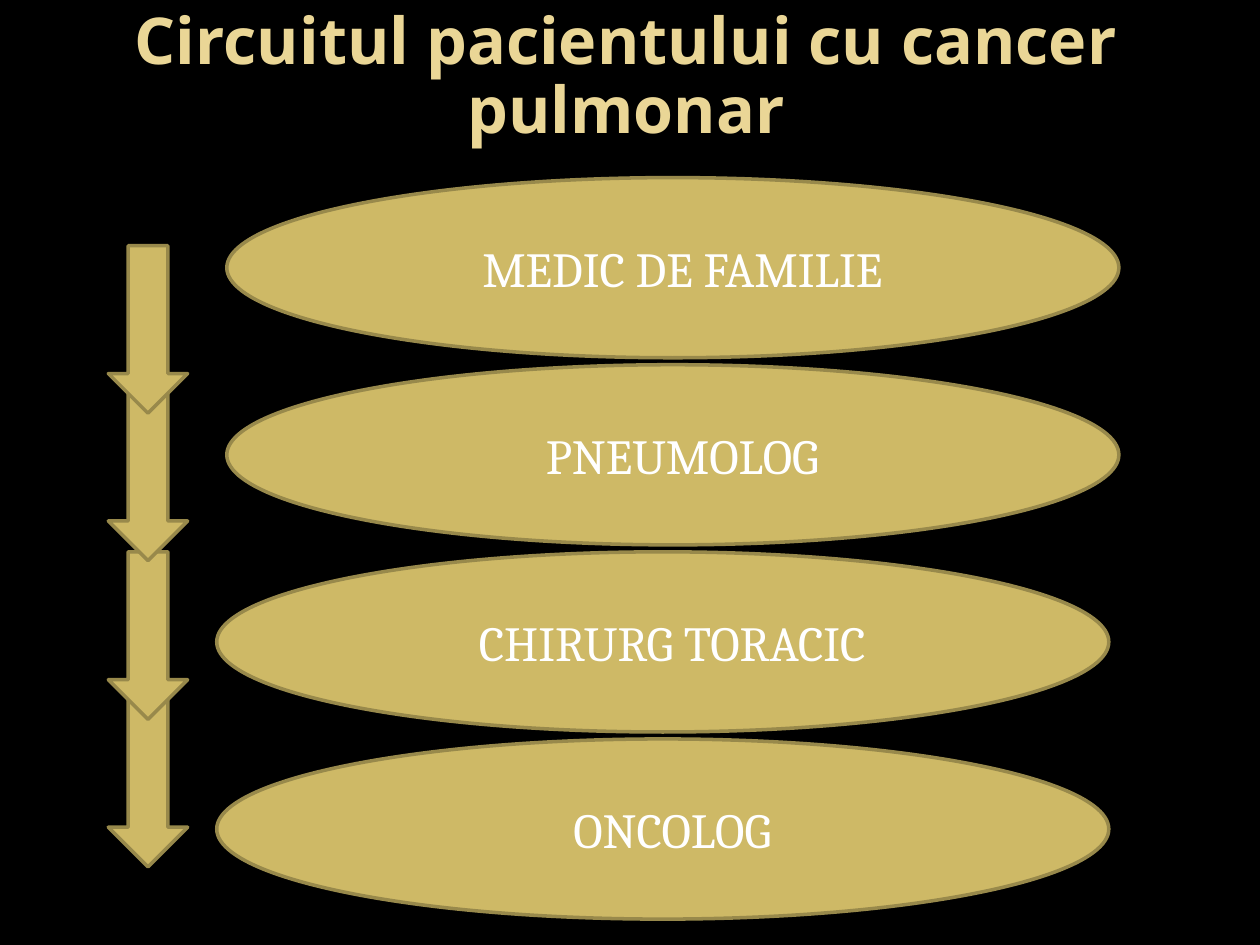
"""Build the slide showing the care pathway of a lung cancer patient."""
import pptx
import pptx.dml.color
import pptx.enum.shapes
import pptx.enum.text
import pptx.util

Inches, Pt = pptx.util.Inches, pptx.util.Pt
RGB = pptx.dml.color.RGBColor.from_string
SHAPE = pptx.enum.shapes.MSO_SHAPE
CENTER = pptx.enum.text.PP_ALIGN.CENTER
MIDDLE = pptx.enum.text.MSO_ANCHOR.MIDDLE

TITLE = "Circuitul pacientului cu cancer pulmonar"
STEPS = [
    ("MEDIC DE FAMILIE", 1.8),
    ("PNEUMOLOG", 1.8),
    ("CHIRURG TORACIC", 1.72),
    ("ONCOLOG", 1.72),
]
STEP_TOP, STEP_PITCH, STEP_SIZE = 1.41, 1.485, (7.08, 1.43)
ARROW_TOPS = [5.55, 4.38, 3.12, 1.95]
ARROW_LEFT, ARROW_SIZE = 0.86, (0.63, 1.33)

THEME = {
    "background": RGB("000000"),
    "title": RGB("EAD696"),
    "fill": RGB("CEB966"),
    "line": RGB("98894B"),
    "text": RGB("FFFFFF"),
    "title_font": "Noto Sans",
    "text_font": "Cambria",
    "title_size": Pt(36.9),
    "text_size": Pt(28),
    "line_width": Pt(2),
}


def write(sp, text, kind, bold=False):
    tf = sp.text_frame
    tf.text = text
    tf.word_wrap = True
    tf.vertical_anchor = MIDDLE
    p = tf.paragraphs[0]
    p.alignment = CENTER
    font = p.runs[0].font
    font.name = THEME[kind + "_font"]
    font.size = THEME[kind + "_size"]
    font.color.rgb = THEME[kind]
    font.bold = bold
    return p


def add_gold_shape(s, preset, left, top, size):
    sp = s.shapes.add_shape(preset, *map(Inches, (left, top, *size)))
    sp.shadow.inherit = False
    sp.fill.solid()
    sp.fill.fore_color.rgb = THEME["fill"]
    sp.line.color.rgb = THEME["line"]
    sp.line.width = THEME["line_width"]
    return sp


def add_title(s):
    sp = s.shapes.title
    sp.left, sp.top, sp.width, sp.height = map(Inches, (0.47, 0, 9, 1.25))
    p = write(sp, TITLE, "title", bold=True)
    p.line_spacing = 0.89
    sp.text_frame.auto_size = pptx.enum.text.MSO_AUTO_SIZE.NONE


def add_step(s, index, text, left):
    top = STEP_TOP + index * STEP_PITCH
    sp = add_gold_shape(s, SHAPE.OVAL, left, top, STEP_SIZE)
    p = write(sp, text, "text")
    p.space_before = Pt(5.6)
    pPr = p._p.get_or_add_pPr()
    pPr.set("marL", str(Inches(0.6)))
    pPr.set("indent", str(Inches(-0.45)))


def main():
    prs = pptx.Presentation()
    prs.slide_width, prs.slide_height = Inches(10), Inches(7.5)
    s = prs.slides.add_slide(prs.slide_layouts[5])
    s.background.fill.solid()
    s.background.fill.fore_color.rgb = THEME["background"]
    add_title(s)
    for index, (text, left) in enumerate(STEPS):
        add_step(s, index, text, left)
    for top in ARROW_TOPS:
        add_gold_shape(s, SHAPE.DOWN_ARROW, ARROW_LEFT, top, ARROW_SIZE)
    prs.save("out.pptx")


if __name__ == "__main__":
    main()
